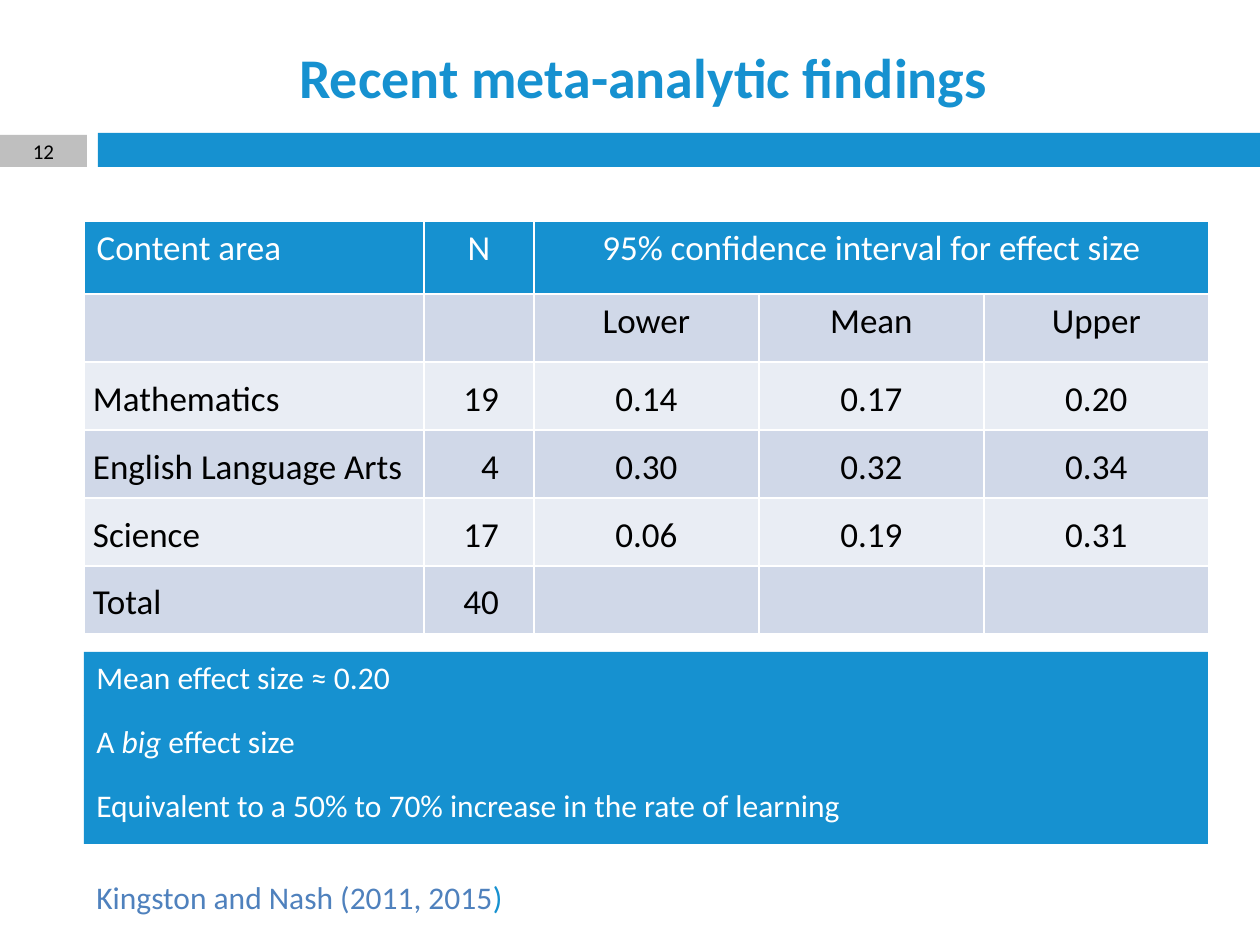
from lxml import etree
from pptx import Presentation
from pptx import util as u
from pptx.dml.color import RGBColor
from pptx.enum import shapes, text
from pptx.oxml import ns

BLUE = RGBColor(0x16, 0x91, 0xD0)
GRAY = RGBColor(0xBF, 0xBF, 0xBF)
WHITE = RGBColor(0xFF, 0xFF, 0xFF)
BLACK = RGBColor(0, 0, 0)
CITATION_BLUE = RGBColor(0x4F, 0x81, 0xBD)
BANDS = [RGBColor(0xE9, 0xED, 0xF4), RGBColor(0xD0, 0xD8, 0xE8)]
PX = 914400 / 126
LEFT, CENTER, RIGHT = text.PP_ALIGN.LEFT, text.PP_ALIGN.CENTER, text.PP_ALIGN.RIGHT
TOP, MIDDLE = text.MSO_ANCHOR.TOP, text.MSO_ANCHOR.MIDDLE


def px(*lengths):
    return [u.Emu(round(length * PX)) for length in lengths]


def write(frame, runs, size, align=LEFT, anchor=TOP):
    frame.word_wrap = True
    frame.vertical_anchor = anchor
    paragraph = frame.paragraphs[0]
    paragraph.alignment = align
    for content, color, formats in runs:
        run = paragraph.add_run()
        run.text = content
        run.font.color.rgb = color
        for name, value in {"name": "Calibri", "size": u.Pt(size), "bold": False, **formats}.items():
            setattr(run.font, name, value)
    return paragraph


presentation = Presentation()
presentation.slide_width, presentation.slide_height = px(1260, 945)
slide = presentation.slides.add_slide(presentation.slide_layouts[6])

bars = [
    ((98, 133, 1162, 34), BLUE, []),
    ((0, 135, 87, 32), GRAY, []),
]
findings = [
    [("Mean effect size ≈ 0.20", WHITE, {})],
    [("A ", WHITE, {}), ("big ", WHITE, {"italic": True}), ("effect size", WHITE, {})],
    [("Equivalent to a 50% to 70% increase in the rate of learning", WHITE, {})],
]
for index, runs in enumerate(findings):
    bars.append(((84, 652 + 64 * index, 1124, 64), BLUE, runs))

for box, color, runs in bars:
    shape = slide.shapes.add_shape(shapes.MSO_SHAPE.RECTANGLE, *px(*box))
    shape.shadow.inherit = False
    shape.fill.solid()
    shape.fill.fore_color.rgb = color
    shape.line.fill.background()
    if runs:
        write(shape.text_frame, runs, 18)

labels = [
    ((98, 33, 1091, 86), [("Recent meta-analytic findings", BLUE, {"bold": True})], 32, CENTER, MIDDLE),
    ((84, 872, 611, 50), [("Kingston and Nash (2011, 2015", CITATION_BLUE, {}), (")", BLUE, {})], 18, LEFT, TOP),
    ((0, 135, 87, 32), [("12", BLACK, {})], 12, CENTER, MIDDLE),
]
for box, runs, size, align, anchor in labels:
    label = slide.shapes.add_textbox(*px(*box))
    write(label.text_frame, runs, size, align, anchor)

rows = [
    ["Content area", "N", "95% confidence interval for effect size", "", ""],
    ["", "", "Lower", "Mean", "Upper"],
    ["Mathematics", "19", "0.14", "0.17", "0.20"],
    ["English Language Arts", "4", "0.30", "0.32", "0.34"],
    ["Science", "17", "0.06", "0.19", "0.31"],
    ["Total", "40", "", "", ""],
]
widths = [340, 110, 225, 225, 225]
heights = [73] + [68] * 5
table = slide.shapes.add_table(6, 5, *px(84, 221, sum(widths), sum(heights))).table
for column, width in zip(table.columns, px(*widths)):
    column.width = width
for row, height in zip(table.rows, px(*heights)):
    row.height = height
table.cell(0, 2).merge(table.cell(0, 4))

for r, values in enumerate(rows):
    for c, value in enumerate(values):
        cell = table.cell(r, c)
        properties = cell._tc.get_or_add_tcPr()
        for edge in ("lnL", "lnR", "lnT", "lnB"):
            line = etree.SubElement(properties, ns.qn("a:" + edge), w=str(u.Pt(1)))
            fill = etree.SubElement(line, ns.qn("a:solidFill"))
            etree.SubElement(fill, ns.qn("a:srgbClr"), val=str(WHITE))
        cell.fill.solid()
        cell.fill.fore_color.rgb = BANDS[r % 2] if r else BLUE
        if not value:
            continue
        align = LEFT if c == 0 else RIGHT if c == 1 and r else CENTER
        paragraph = write(cell.text_frame, [(value, BLACK if r else WHITE, {})], 20, align)
        cell.vertical_anchor = MIDDLE if r > 1 else TOP
        if r:
            paragraph.line_spacing = 1.15
            margins = px(9, 0, 35 if c == 1 else 9, 0)
            for side, margin in zip(("left", "top", "right", "bottom"), margins):
                setattr(cell, "margin_" + side, margin)

presentation.save("out.pptx")
